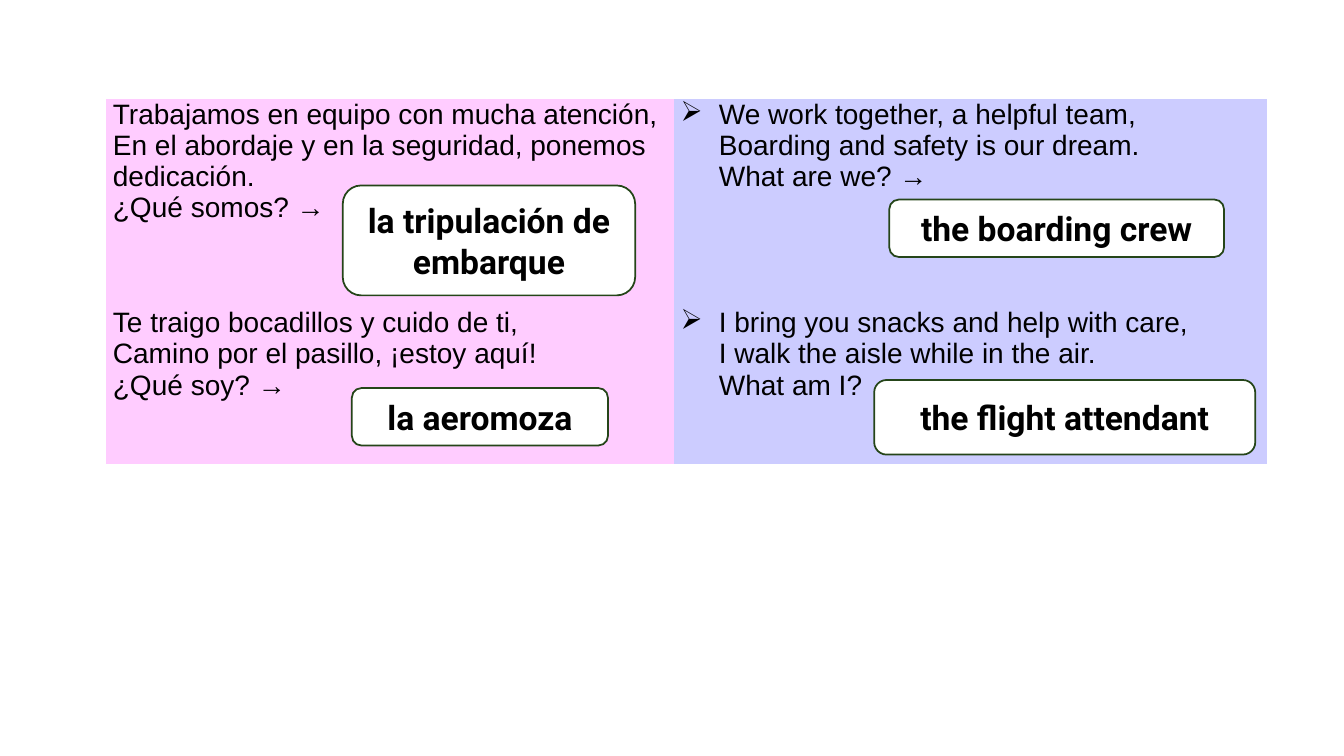
from lxml import etree
from pptx import Presentation
from pptx.dml.color import RGBColor
from pptx.enum.shapes import MSO_SHAPE
from pptx.enum.text import MSO_ANCHOR, PP_ALIGN
from pptx.oxml.ns import qn
from pptx.util import Inches, Pt

ROUND = MSO_SHAPE.ROUNDED_RECTANGLE
MIDDLE = MSO_ANCHOR.MIDDLE
LEFT, CENTER = PP_ALIGN.LEFT, PP_ALIGN.CENTER
PLAIN_GRID = "{2D5ABB26-0587-4C30-8999-92F81FD0307C}"

COLORS = {"pink": "FFCCFF", "lilac": "CCCCFF", "white": "FFFFFF",
          "green": "254519", "black": "000000"}

RIDDLES = [
    ("Trabajamos en equipo con mucha atención,\n"
     "En el abordaje y en la seguridad, ponemos dedicación.\n"
     "¿Qué somos? →",
     "We work together, a helpful team,\n"
     "Boarding and safety is our dream.\n"
     "What are we? →"),
    ("Te traigo bocadillos y cuido de ti,\n"
     "Camino por el pasillo, ¡estoy aquí!\n"
     "¿Qué soy? →",
     "I bring you snacks and help with care,\n"
     "I walk the aisle while in the air.\n"
     "What am I? →"),
]
# text, left, top, width, height
ANSWERS = [
    ("la tripulación de embarque", 3.4, 1.84, 2.9, 1.09),
    ("the boarding crew", 8.82, 1.98, 3.32, 0.57),
    ("la aeromoza", 3.49, 3.85, 2.54, 0.57),
    ("the flight attendant", 8.67, 3.77, 3.78, 0.74),
]
COLUMNS = [(5.63, "pink", None), (5.89, "lilac", "➢")]  # width, fill, bullet
HEIGHTS = [2.07, 1.55]


def color(name):
    return RGBColor.from_string(COLORS[name])


def write(frame, text, size=20, font="Arial", bold=False, align=LEFT, bullet=None):
    frame.word_wrap = True
    para = frame.paragraphs[0]
    para.text = text
    para.alignment = align
    for run in para.runs:
        run.font.size = Pt(size)
        run.font.name = font
        run.font.bold = bold
        run.font.color.rgb = color("black")
    if bullet:
        props = para._p.get_or_add_pPr()
        props.set("marL", str(Inches(0.38)))
        props.set("indent", str(Inches(-0.38)))
        etree.SubElement(props, qn("a:buChar")).set("char", bullet)


def add_riddles(slide):
    width = sum(column[0] for column in COLUMNS)
    frame = slide.shapes.add_table(
        len(RIDDLES), len(COLUMNS), Inches(1.05), Inches(0.98),
        Inches(width), Inches(sum(HEIGHTS)))
    for style in frame.element.iter(qn("a:tableStyleId")):
        style.text = PLAIN_GRID
    table = frame.table
    table.first_row = table.horz_banding = False
    for row, height in zip(table.rows, HEIGHTS):
        row.height = Inches(height)
    for col, (width, fill, bullet) in enumerate(COLUMNS):
        table.columns[col].width = Inches(width)
        for row, pair in enumerate(RIDDLES):
            cell = table.cell(row, col)
            cell.margin_left = cell.margin_right = Inches(0.07)
            cell.margin_top = cell.margin_bottom = 0
            cell.fill.solid()
            cell.fill.fore_color.rgb = color(fill)
            write(cell.text_frame, pair[col], bullet=bullet)


def add_answer(slide, text, *box):
    shape = slide.shapes.add_shape(ROUND, *map(Inches, box))
    shape.shadow.inherit = False
    shape.fill.solid()
    shape.fill.fore_color.rgb = color("white")
    shape.line.color.rgb = color("green")
    shape.line.width = Pt(1.25)
    shape.text_frame.vertical_anchor = MIDDLE
    write(shape.text_frame, text, size=24, font="Roboto", bold=True, align=CENTER)


def main():
    deck = Presentation()
    deck.slide_width, deck.slide_height = Inches(13.33), Inches(7.5)
    slide = deck.slides.add_slide(deck.slide_layouts[6])
    add_riddles(slide)
    for answer in ANSWERS:
        add_answer(slide, *answer)
    deck.save("out.pptx")


if __name__ == "__main__":
    main()
